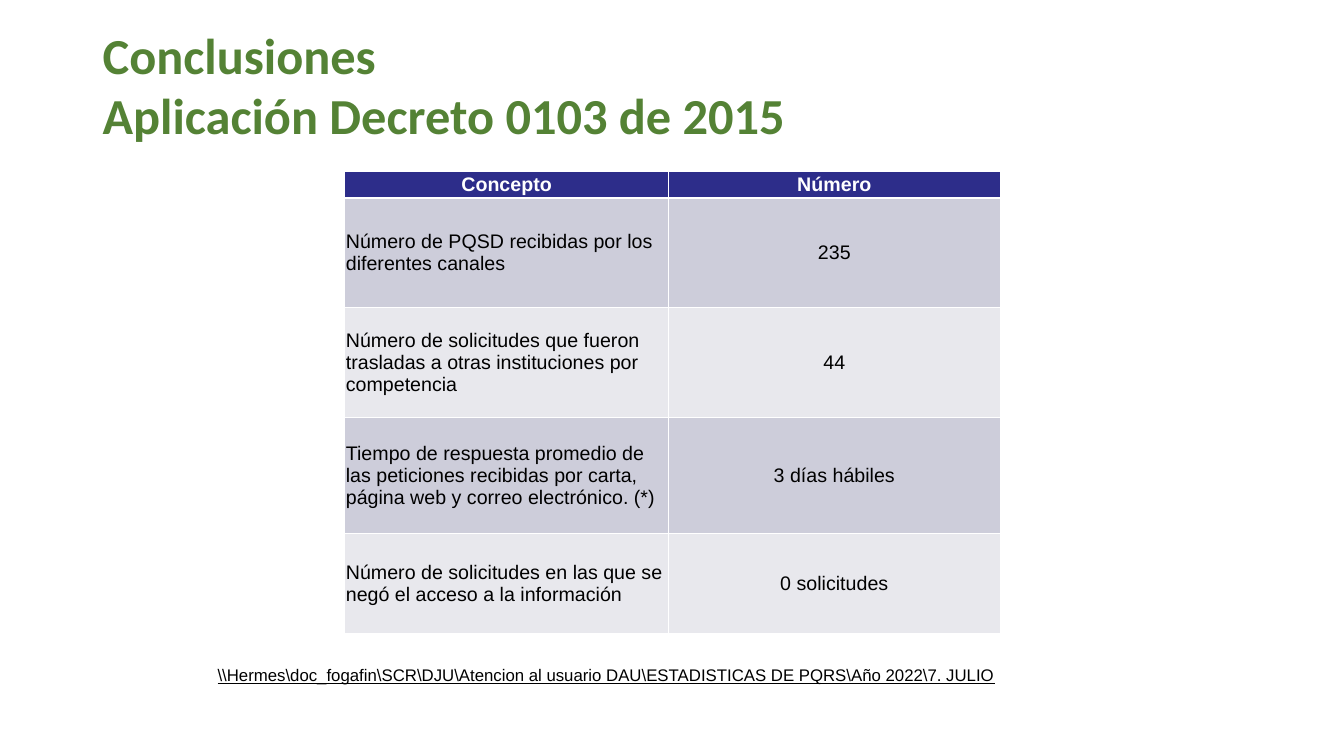
from pptx import Presentation
from pptx.dml.color import RGBColor
from pptx.enum.text import MSO_ANCHOR as Anchor, PP_ALIGN as Align
from pptx.oxml import parse_xml
from pptx.oxml.ns import nsdecls
from pptx.util import Inches, Pt

GREEN = RGBColor(0x54, 0x82, 0x35)
NAVY = RGBColor(0x2D, 0x2D, 0x8A)
LILAC = RGBColor(0xCD, 0xCD, 0xDA)
PALE = RGBColor(0xE8, 0xE8, 0xED)
WHITE = RGBColor(0xFF, 0xFF, 0xFF)
BLACK = RGBColor(0x00, 0x00, 0x00)

TITLE = ["Conclusiones", "Aplicación Decreto 0103 de 2015"]
ROWS = [
    ("Concepto", "Número"),
    ("Número de PQSD recibidas por los diferentes canales", "235"),
    ("Número de solicitudes que fueron trasladas a otras instituciones "
     "por competencia", "44"),
    ("Tiempo de respuesta promedio de las peticiones recibidas por carta, "
     "página web y correo electrónico. (*)", "3 días hábiles"),
    ("Número de solicitudes en las que se negó el acceso a la información",
     "0 solicitudes"),
]
COL_WIDTHS = [24.08, 24.68]
ROW_HEIGHTS = [3.47, 14.53, 14.53, 15.33, 13.33]
SOURCE = (r"\\Hermes\doc_fogafin\SCR\DJU\Atencion al usuario DAU"
          r"\ESTADISTICAS DE PQRS\Año 2022\7. JULIO")


class Deck:
    """Places elements on a slide by percentages of its width and height."""
    heading_font = "Calibri"
    body_font = "Arial"

    def __init__(self):
        self.prs = Presentation()
        self.prs.slide_width = Inches(13.33)
        self.prs.slide_height = Inches(7.5)
        self.s = self.prs.slides.add_slide(self.prs.slide_layouts[6])

    def x(self, percent):
        return round(self.prs.slide_width * percent / 100)

    def y(self, percent):
        return round(self.prs.slide_height * percent / 100)

    def box(self, left, top, width, height):
        return self.x(left), self.y(top), self.x(width), self.y(height)

    def add_lines(self, p, lines, size, color, font=None, bold=False,
                  underline=False, align=Align.LEFT):
        p.alignment = align
        for i, line in enumerate(lines):
            if i:
                p.add_line_break()
            r = p.add_run()
            r.text = line
            r.font.name = font or self.body_font
            r.font.size = Pt(size)
            r.font.bold = bold
            r.font.underline = underline
            r.font.color.rgb = color

    def text(self, place, lines, size, color, anchor=Anchor.TOP, **style):
        tf = self.s.shapes.add_textbox(*self.box(*place)).text_frame
        tf.word_wrap = True
        tf.vertical_anchor = anchor
        self.add_lines(tf.paragraphs[0], lines, size, color, **style)

    def table(self, left, top, widths, heights, rows):
        place = self.box(left, top, sum(widths), sum(heights))
        table = self.s.shapes.add_table(len(rows), len(widths), *place).table
        for col, width in zip(table.columns, widths):
            col.width = self.x(width)
        for row, height in zip(table.rows, heights):
            row.height = self.y(height)
        for i, values in enumerate(rows):
            for j, value in enumerate(values):
                self.cell(table.cell(i, j), value, i, j)

    def cell(self, cell, value, row, col):
        header = row == 0
        cell.margin_left = cell.margin_right = cell.margin_top = Inches(0.01)
        cell.margin_bottom = 0
        cell.vertical_anchor = Anchor.MIDDLE
        self.add_lines(cell.text_frame.paragraphs[0], [value], 14,
                       WHITE if header else BLACK, bold=header,
                       align=Align.CENTER if header or col else Align.LEFT)
        self.borders(cell, top=1.5 if row == 1 else 1,
                     bottom=1.5 if header else 1)
        cell.fill.solid()
        cell.fill.fore_color.rgb = (
            NAVY if header else LILAC if row % 2 else PALE)

    def borders(self, cell, top, bottom):
        tc_pr = cell._tc.get_or_add_tcPr()
        for side, width in zip("LRTB", (1, 1, top, bottom)):
            tc_pr.append(parse_xml(
                f'<a:ln{side} {nsdecls("a")} w="{Pt(width)}"><a:solidFill>'
                f'<a:srgbClr val="{WHITE}"/></a:solidFill></a:ln{side}>'))


def main():
    deck = Deck()
    deck.text((6.9, 1.47, 86.27, 19.33), TITLE, 36, GREEN,
              anchor=Anchor.MIDDLE, font=deck.heading_font, bold=True)
    deck.text((15.45, 87.33, 71.57, 4), [SOURCE], 12, BLACK,
              underline=True, align=Align.JUSTIFY)
    deck.table(25.66, 22.67, COL_WIDTHS, ROW_HEIGHTS, ROWS)
    deck.prs.save("out.pptx")


if __name__ == "__main__":
    main()
